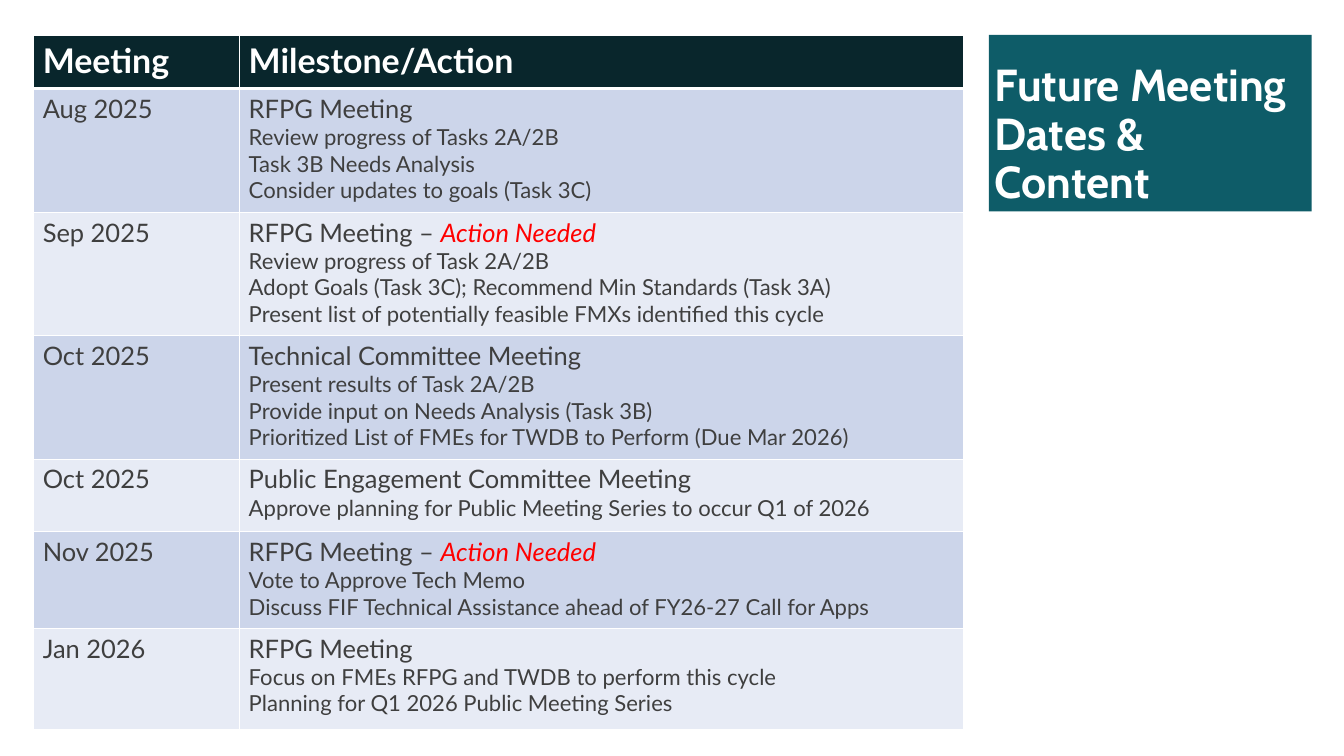
from dataclasses import dataclass

from lxml.etree import SubElement
from pptx import Presentation
from pptx.dml.color import RGBColor
from pptx.enum.shapes import MSO_SHAPE
from pptx.enum.text import MSO_ANCHOR, PP_ALIGN
from pptx.oxml.ns import qn
from pptx.slide import Slide
from pptx.table import Table, _Cell
from pptx.text.text import Font
from pptx.util import Inches, Pt


@dataclass(frozen=True)
class Theme:
    title_font: str = "Cabin"
    body_font: str = "Lato"
    title_size: float = 52.8
    header_size: float = 40
    meeting_size: float = 30
    detail_size: float = 26
    white: str = "FFFFFF"
    text: str = "3F3F3F"
    alert: str = "FF0000"
    title_fill: str = "0E5C68"
    header_fill: str = "09262C"
    bands: tuple[str, str] = ("CCD5EA", "E7EBF5")
    thin_line: float = 1
    thick_line: float = 3


@dataclass(frozen=True)
class Meeting:
    date: str
    name: str
    details: tuple[str, ...]
    height: float
    action_needed: bool = False


THEME = Theme()
HEADER_HEIGHT = 0.87
COLUMN_WIDTHS = (3.37, 11.85)
HEADINGS = ("Meeting", "Milestone/Action")
MEETINGS = (
    Meeting("Aug 2025", "RFPG Meeting", (
        "Review progress of Tasks 2A/2B",
        "Task 3B Needs Analysis",
        "Consider updates to goals (Task 3C)"), 2.02),
    Meeting("Sep 2025", "RFPG Meeting", (
        "Review progress of Task 2A/2B",
        "Adopt Goals (Task 3C); Recommend Min Standards (Task 3A)",
        "Present list of potentially feasible FMXs identified this cycle"), 2.02, True),
    Meeting("Oct 2025", "Technical Committee Meeting", (
        "Present results of Task 2A/2B",
        "Provide input on Needs Analysis (Task 3B)",
        "Prioritized List of FMEs for TWDB to Perform (Due Mar 2026)"), 2.02),
    Meeting("Oct 2025", "Public Engagement Committee Meeting", (
        "Approve planning for Public Meeting Series to occur Q1 of 2026",), 1.19),
    Meeting("Nov 2025", "RFPG Meeting", (
        "Vote to Approve Tech Memo",
        "Discuss FIF Technical Assistance ahead of FY26-27 Call for Apps"), 1.58, True),
    Meeting("Jan 2026", "RFPG Meeting", (
        "Focus on FMEs RFPG and TWDB to perform this cycle",
        "Planning for Q1 2026 Public Meeting Series"), 1.65),
)


def style_font(font: Font, size: float, color: str, name: str = THEME.body_font,
               bold: bool = False, italic: bool = False) -> None:
    font.name = name
    font.size = Pt(size)
    font.bold = bold
    font.italic = italic
    font.color.rgb = RGBColor.from_string(color)


def style_cell(cell: _Cell, fill: str, top: float, bottom: float) -> None:
    """Set margins, white borders and fill; borders must come before the fill."""
    cell.margin_left = cell.margin_right = Inches(0.16)
    cell.margin_top = cell.margin_bottom = Inches(0.08)
    properties = cell._tc.get_or_add_tcPr()
    widths = {"a:lnL": THEME.thin_line, "a:lnR": THEME.thin_line, "a:lnT": top, "a:lnB": bottom}
    for tag, width in widths.items():
        line = SubElement(properties, qn(tag), w=str(Pt(width)))
        SubElement(SubElement(line, qn("a:solidFill")), qn("a:srgbClr"), val=THEME.white)
    cell.fill.solid()
    cell.fill.fore_color.rgb = RGBColor.from_string(fill)


def fill_header(table: Table) -> None:
    table.rows[0].height = Inches(HEADER_HEIGHT)
    for column, heading in enumerate(HEADINGS):
        cell = table.cell(0, column)
        style_cell(cell, THEME.header_fill, THEME.thin_line, THEME.thick_line)
        cell.text_frame.text = heading
        run = cell.text_frame.paragraphs[0].runs[0]
        style_font(run.font, THEME.header_size, THEME.white, bold=True)


def fill_meeting(table: Table, row: int, meeting: Meeting) -> None:
    table.rows[row].height = Inches(meeting.height)
    date_cell, action_cell = table.cell(row, 0), table.cell(row, 1)
    top = THEME.thick_line if row == 1 else THEME.thin_line
    for cell in (date_cell, action_cell):
        style_cell(cell, THEME.bands[(row - 1) % 2], top, THEME.thin_line)

    date_cell.text_frame.text = meeting.date
    style_font(date_cell.text_frame.paragraphs[0].runs[0].font, THEME.meeting_size, THEME.text)

    name = f"{meeting.name} – " if meeting.action_needed else meeting.name
    action_cell.text_frame.text = "\n".join((name, *meeting.details))
    name_para, *detail_paras = action_cell.text_frame.paragraphs
    style_font(name_para.runs[0].font, THEME.meeting_size, THEME.text)
    for para in detail_paras:
        style_font(para.runs[0].font, THEME.detail_size, THEME.text)
    if meeting.action_needed:
        span = name_para.add_run()
        span.text = "Action Needed"
        style_font(span.font, THEME.meeting_size, THEME.alert, italic=True)


def add_schedule(page: Slide) -> None:
    height = HEADER_HEIGHT + sum(meeting.height for meeting in MEETINGS)
    frame = page.shapes.add_table(len(MEETINGS) + 1, len(COLUMN_WIDTHS), Inches(0.54),
                                  Inches(0.58), Inches(sum(COLUMN_WIDTHS)), Inches(height))
    table = frame.table
    for column, width in zip(table.columns, COLUMN_WIDTHS):
        column.width = Inches(width)
    fill_header(table)
    for row, meeting in enumerate(MEETINGS, start=1):
        fill_meeting(table, row, meeting)


def add_title(page: Slide) -> None:
    box = page.shapes.add_shape(MSO_SHAPE.RECTANGLE, Inches(16.18), Inches(0.57),
                                Inches(5.28), Inches(2.89))
    box.shadow.inherit = False
    box.fill.solid()
    box.fill.fore_color.rgb = RGBColor.from_string(THEME.title_fill)
    box.line.fill.background()
    frame = box.text_frame
    frame.word_wrap = True
    frame.vertical_anchor = MSO_ANCHOR.BOTTOM
    frame.text = "Future Meeting Dates & Content"
    para = frame.paragraphs[0]
    para.alignment = PP_ALIGN.LEFT
    para.line_spacing = 0.9
    style_font(para.runs[0].font, THEME.title_size, THEME.white, THEME.title_font, bold=True)


def main() -> None:
    deck = Presentation()
    deck.slide_width, deck.slide_height = Inches(21.99), Inches(12.37)
    page = deck.slides.add_slide(deck.slide_layouts[6])
    add_title(page)
    add_schedule(page)
    deck.save("out.pptx")


if __name__ == "__main__":
    main()
